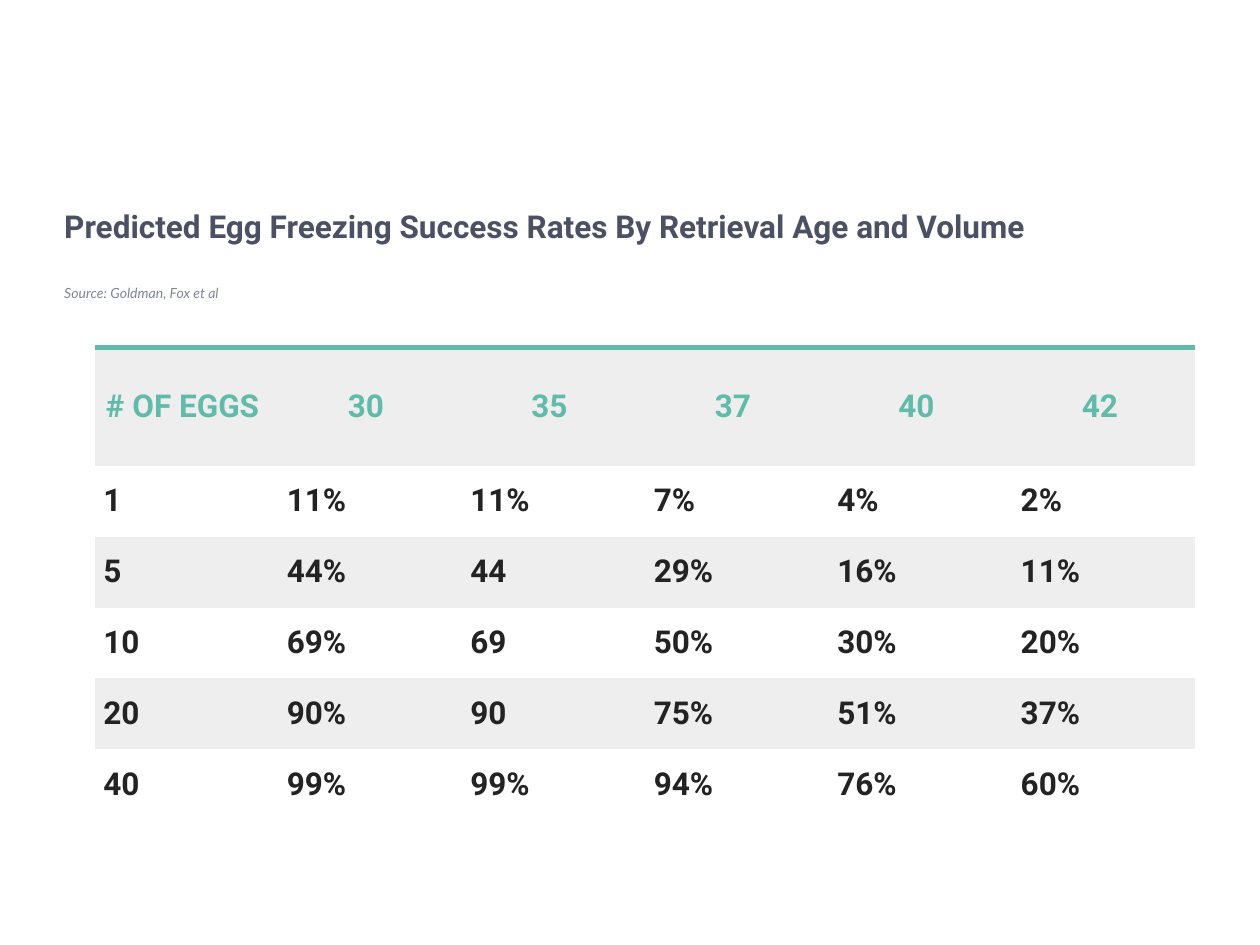
from lxml import etree
from pptx import Presentation
from pptx.dml.color import RGBColor
from pptx.enum.text import MSO_ANCHOR, PP_ALIGN
from pptx.oxml.ns import qn
from pptx.util import Inches, Pt

MIDDLE, TOP = MSO_ANCHOR.MIDDLE, MSO_ANCHOR.TOP
LEFT, CENTER = PP_ALIGN.LEFT, PP_ALIGN.CENTER

COLORS = {
    "teal": "60BBAA",
    "band": "EEEEEE",
    "white": "FFFFFF",
    "title": "4C5063",
    "source": "808597",
    "body": "232323",
}
NO_STYLE_NO_GRID = "{2D5ABB26-0587-4C30-8999-92F81FD0307C}"

HEADER = ["# OF EGGS", "30", "35", "37", "40", "42"]
RATES = [
    ["1", "11%", "11%", "7%", "4%", "2%"],
    ["5", "44%", "44", "29%", "16%", "11%"],
    ["10", "69%", "69", "50%", "30%", "20%"],
    ["20", "90%", "90", "75%", "51%", "37%"],
    ["40", "99%", "99%", "94%", "76%", "60%"],
]


def add_run(paragraph, text, size, color, font="Roboto", bold=False, italic=False):
    run = paragraph.add_run()
    run.text = text
    run.font.name = font
    run.font.size = Pt(size)
    run.font.bold = bold
    run.font.italic = italic
    run.font.color.rgb = RGBColor.from_string(COLORS[color])


def set_margins(target, left, top, right, bottom):
    target.margin_left, target.margin_top = Inches(left), Inches(top)
    target.margin_right, target.margin_bottom = Inches(right), Inches(bottom)


def add_top_border(cell, color, width):
    properties = cell._tc.get_or_add_tcPr()
    line = etree.Element(qn("a:lnT"), w=str(Pt(width)))
    fill = etree.SubElement(line, qn("a:solidFill"))
    etree.SubElement(fill, qn("a:srgbClr"), val=COLORS[color])
    properties.insert(0, line)  # borders come before the cell fill


def add_heading(slide, left, top, width, height):
    box = slide.shapes.add_textbox(left, top, width, height)
    frame = box.text_frame
    frame.word_wrap = True
    frame.vertical_anchor = TOP
    set_margins(frame, 0, 0.02, 0, 0.21)

    # Title
    title = frame.paragraphs[0]
    add_run(title, "Predicted Egg Freezing Success Rates By Retrieval Age and Volume",
            18, "title", bold=True)

    # Source line
    source = frame.add_paragraph()
    source.space_before = Pt(23)
    add_run(source, "Source: Goldman, Fox et al", 8, "source", font="Lato", italic=True)


def fill_cell(cell, text, is_header, fill):
    cell.fill.solid()
    cell.fill.fore_color.rgb = RGBColor.from_string(COLORS[fill])
    cell.vertical_anchor = MIDDLE
    paragraph = cell.text_frame.paragraphs[0]
    paragraph.alignment = CENTER if is_header else LEFT
    add_run(paragraph, text, 18, "teal" if is_header else "body", bold=True)
    if is_header:
        set_margins(cell, 0.04, 0.07, 0.1, 0.07)
        add_top_border(cell, "teal", 3.5)
    else:
        set_margins(cell, 0.07, 0.07, 0.07, 0.07)


def add_rates_table(slide, left, top, width, height):
    rows = [HEADER] + RATES
    table = slide.shapes.add_table(len(rows), len(HEADER), left, top, width, height).table
    table.first_row = False
    table.horz_banding = False
    table._tbl.tblPr.find(qn("a:tableStyleId")).text = NO_STYLE_NO_GRID

    # Equal columns; a tall header over equal body rows
    for column in table.columns:
        column.width = width // len(HEADER)
    header_height = height // 4
    for index, row in enumerate(table.rows):
        row.height = (height - header_height) // len(RATES) if index else header_height

    for row_index, values in enumerate(rows):
        fill = "white" if row_index % 2 else "band"
        for column_index, text in enumerate(values):
            fill_cell(table.cell(row_index, column_index), text, row_index == 0, fill)


def main():
    presentation = Presentation()
    presentation.slide_width = Inches(10)
    presentation.slide_height = Inches(7.5)
    slide = presentation.slides.add_slide(presentation.slide_layouts[6])
    add_rates_table(slide, Inches(0.75), Inches(2.76), Inches(8.74), Inches(3.75))
    add_heading(slide, Inches(0.51), Inches(1.62), Inches(9.29), Inches(1.27))
    presentation.save("out.pptx")


if __name__ == "__main__":
    main()
